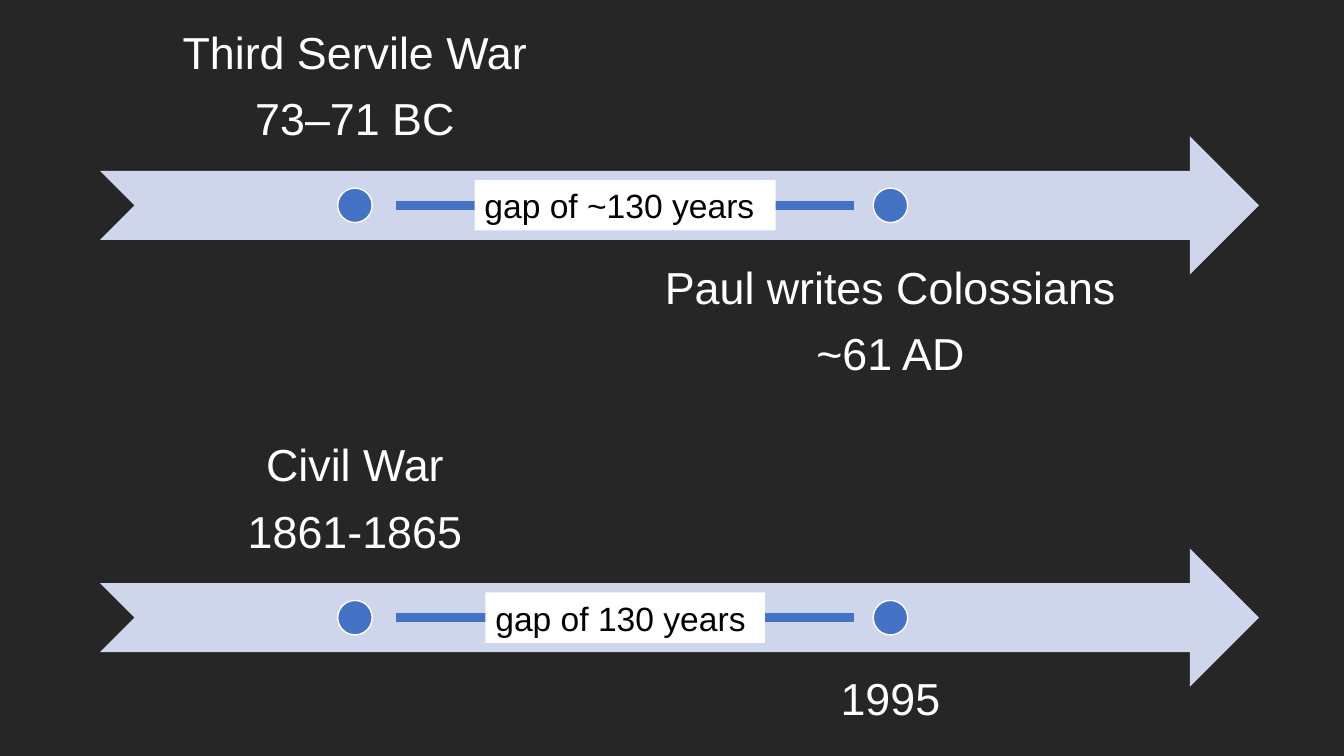
from dataclasses import dataclass
from lxml.etree import SubElement
from pptx import Presentation
from pptx.dml.color import RGBColor
from pptx.enum.shapes import MSO_CONNECTOR, MSO_SHAPE
from pptx.enum.text import MSO_ANCHOR, PP_ALIGN
from pptx.oxml.ns import qn
from pptx.util import Cm, Pt


@dataclass(frozen=True)
class Theme:
    """Colours, font and type sizes of the slide."""
    back: str = "262626"
    band: str = "CFD5EA"
    mark: str = "4472C4"
    light: str = "FFFFFF"
    dark: str = "000000"
    font: str = "Arial"
    event: int = 32
    gap: int = 24


THEME = Theme()


def paint(fill, color):
    """Give a fill one solid colour."""
    fill.solid()
    fill.fore_color.rgb = RGBColor.from_string(color)


def write(frame, lines, size, color, align, inset):
    """Write lines as paragraphs with even insets."""
    frame.word_wrap = True
    frame.margin_left = frame.margin_right = Cm(inset[0])
    frame.margin_top = frame.margin_bottom = Cm(inset[1])
    for i, line in enumerate(lines):
        para = frame.add_paragraph() if i else frame.paragraphs[0]
        para.alignment = align
        if i:
            para.space_before = Pt(13)
        run = para.add_run()
        run.text = line
        run.font.name = THEME.font
        run.font.size = Pt(size)
        run.font.color.rgb = RGBColor.from_string(color)


def add_form(shapes, kind, box, color):
    """Add a flat shape without an outline."""
    form = shapes.add_shape(kind, *map(Cm, box))
    form.shadow.inherit = False
    paint(form.fill, color)
    form.line.fill.background()
    return form


def add_event(shapes, box, lines, anchor):
    """Add the centred text of one event."""
    frame = shapes.add_textbox(*map(Cm, box)).text_frame
    write(frame, lines, THEME.event, THEME.light, PP_ALIGN.CENTER, (0.64, 0.64))
    frame.vertical_anchor = anchor
    for para in frame.paragraphs:
        para.line_spacing = 0.9


def add_dot(shapes, x, y, size=0.87):
    """Add a round marker centred on a point."""
    box = (x - size / 2, y - size / 2, size, size)
    dot = add_form(shapes, MSO_SHAPE.OVAL, box, THEME.mark)
    paint(dot.line.fill, THEME.light)
    dot.line.width = Pt(1)


def add_gap(shapes, start, end, y, text, width, height=1.27):
    """Add the line between two events with its label in the middle."""
    line = shapes.add_connector(
        MSO_CONNECTOR.STRAIGHT, Cm(start), Cm(y), Cm(end), Cm(y))
    paint(line.line.fill, THEME.mark)
    line.line.width = Pt(6)
    SubElement(line._element.spPr, qn("a:effectLst"))
    box = ((start + end - width) / 2, y - height / 2, width, height)
    label = add_form(shapes, MSO_SHAPE.RECTANGLE, box, THEME.light)
    write(label.text_frame, [text], THEME.gap, THEME.dark,
          PP_ALIGN.LEFT, (0.25, 0.13))
    label.text_frame.vertical_anchor = MSO_ANCHOR.TOP


def add_era(slide, box, first, second, gap, wide):
    """Add one timeline: arrow, two events and the gap between them."""
    left, top, width, height = box
    band, text = height * 0.4, width * 0.44
    step = height * 0.3
    axis = top + height / 2
    right = left + text * 1.05
    group = slide.shapes.add_group_shape().shapes
    add_form(group, MSO_SHAPE.NOTCHED_RIGHT_ARROW,
             (left, top + step, width, band), THEME.band)
    add_event(group, (left, top, text, band), first, MSO_ANCHOR.BOTTOM)
    add_dot(group, left + text / 2, axis)
    add_event(group, (right, top + 2 * step, text, band), second, MSO_ANCHOR.TOP)
    add_dot(group, right + text / 2, axis)
    add_gap(slide.shapes, left + 7.47, left + 19, axis, gap, wide)


def main():
    """Build the slide and save it."""
    deck = Presentation()
    deck.slide_width, deck.slide_height = Cm(33.87), Cm(19.05)
    slide = deck.slides.add_slide(deck.slide_layouts[6])
    paint(slide.background.fill, THEME.back)
    eras = [
        (["Third Servile War", "73–71 BC"],
         ["Paul writes Colossians", "~61 AD"], "gap of ~130 years", 7.59),
        (["Civil War", "1861-1865"], ["1995"], "gap of 130 years", 7.04),
    ]
    for row, era in enumerate(eras):
        add_era(slide, (2.52, 0.82 + row * 10.39, 29.21, 8.71), *era)
    deck.save("out.pptx")


if __name__ == "__main__":
    main()
